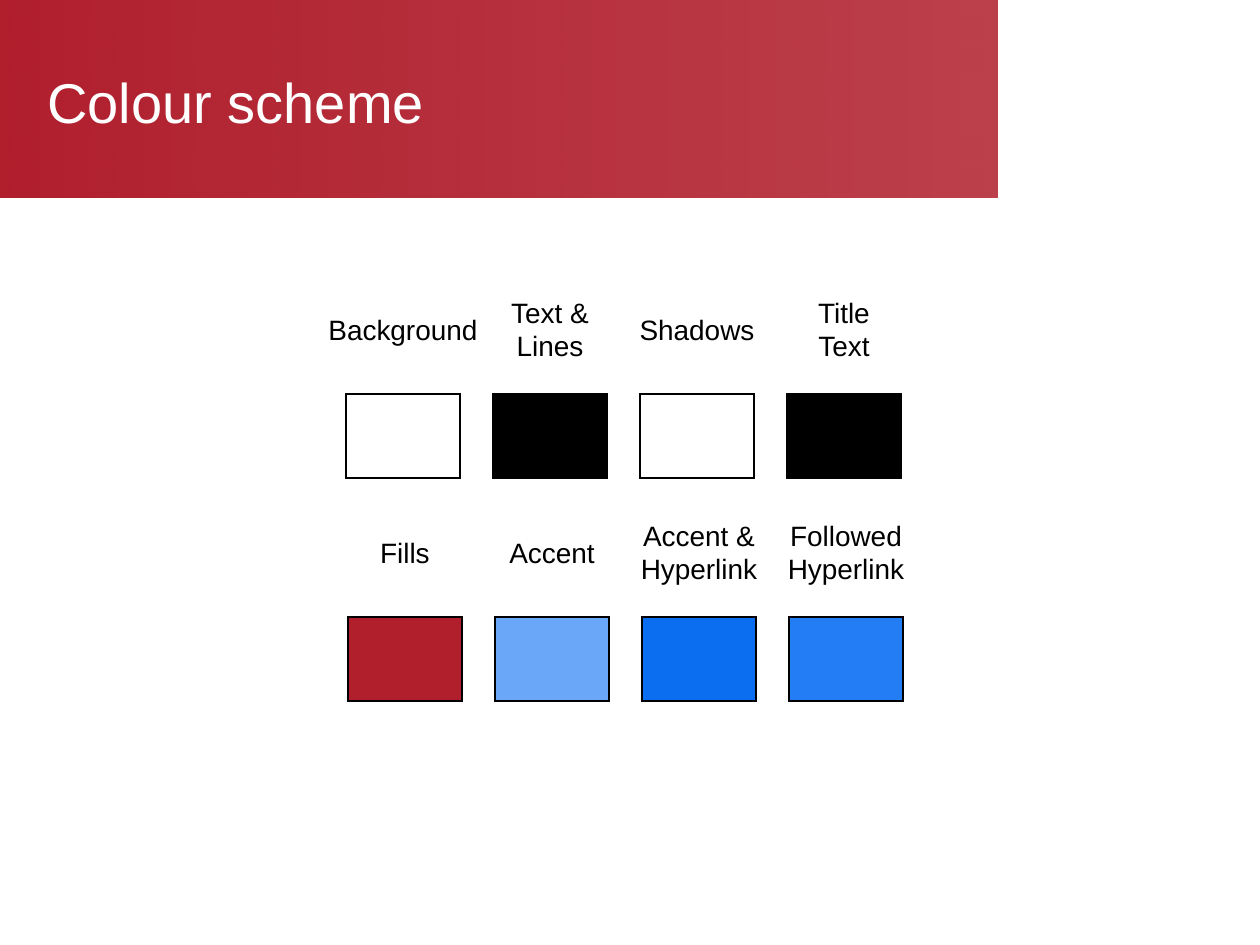
from dataclasses import dataclass

from lxml.etree import SubElement
from pptx import Presentation
from pptx.dml.color import RGBColor
from pptx.enum.shapes import MSO_SHAPE
from pptx.enum.text import MSO_ANCHOR, MSO_AUTO_SIZE, PP_ALIGN
from pptx.oxml.ns import qn
from pptx.shapes.autoshape import Shape
from pptx.slide import Slide
from pptx.util import Emu, Pt

PX_PER_INCH = 126
RED, WHITE, BLACK = "B11F2D", "FFFFFF", "000000"
SWATCH_WIDTH, SWATCH_HEIGHT, SWATCH_PITCH = 114, 84, 147
LABEL_RISE = 65  # from the top of a swatch up to the middle of its label


@dataclass(frozen=True)
class Swatch:
    label: str
    label_width: int
    color: str


@dataclass(frozen=True)
class SwatchRow:
    left: int
    top: int
    swatches: tuple[Swatch, ...]


ROWS = (
    SwatchRow(346, 394, (
        Swatch("Background", 178, WHITE),
        Swatch("Text &\nLines", 108, BLACK),
        Swatch("Shadows", 142, WHITE),
        Swatch("Title\vText", 82, BLACK),
    )),
    SwatchRow(348, 617, (
        Swatch("Fills", 78, RED),
        Swatch("Accent", 114, "6BA7F8"),
        Swatch("Accent &\nHyperlink", 146, "0B6DEF"),
        Swatch("Followed\nHyperlink", 146, "237DF5"),
    )),
)


def px(length: int) -> Emu:
    return Emu(round(length * 914400 / PX_PER_INCH))


def rgb(color: str) -> RGBColor:
    return RGBColor.from_string(color)


def add_text(slide: Slide, text: str, left: int, top: int, width: int, height: int, *,
             size: int, color: str, align: PP_ALIGN = PP_ALIGN.LEFT,
             anchor: MSO_ANCHOR = MSO_ANCHOR.TOP, wrap: bool = True,
             auto_size: MSO_AUTO_SIZE = MSO_AUTO_SIZE.NONE) -> None:
    """Add a text box; a newline starts a paragraph, a vertical tab breaks a line."""
    box = slide.shapes.add_textbox(px(left), px(top), px(width), px(height))
    frame = box.text_frame
    frame.text = text
    frame.word_wrap = wrap
    frame.auto_size = auto_size
    frame.vertical_anchor = anchor
    for paragraph in frame.paragraphs:
        paragraph.alignment = align
        for run in paragraph.runs:
            run.font.name = "Arial"
            run.font.size = Pt(size)
            run.font.color.rgb = rgb(color)


def add_rectangle(slide: Slide, left: int, top: int, width: int, height: int) -> Shape:
    shape = slide.shapes.add_shape(
        MSO_SHAPE.RECTANGLE, px(left), px(top), px(width), px(height))
    shape.shadow.inherit = False
    return shape


def add_banner(slide: Slide) -> None:
    """Add the red title band, which fades slightly towards the right."""
    banner = add_rectangle(slide, 0, 0, 998, 198)
    banner.line.fill.background()
    banner.fill.gradient()
    banner.fill.gradient_angle = 0
    for stop in banner.fill.gradient_stops:
        stop.color.rgb = rgb(RED)
    last_color = list(banner.fill._fill._gradFill.iter(qn("a:srgbClr")))[-1]
    SubElement(last_color, qn("a:alpha"), val="85000")


def add_swatch(slide: Slide, swatch: Swatch, left: int, top: int) -> None:
    shape = add_rectangle(slide, left, top, SWATCH_WIDTH, SWATCH_HEIGHT)
    shape.fill.solid()
    shape.fill.fore_color.rgb = rgb(swatch.color)
    shape.line.color.rgb = rgb(BLACK)
    shape.line.width = Pt(0.75)
    SubElement(shape.line._get_or_add_ln(), qn("a:miter"), lim="800000")

    label_height = 47 if len(swatch.label.splitlines()) == 1 else 81
    add_text(slide, swatch.label,
             left + (SWATCH_WIDTH - swatch.label_width) // 2,
             top - LABEL_RISE - label_height // 2,
             swatch.label_width, label_height,
             size=16, color=BLACK, align=PP_ALIGN.CENTER, wrap=False,
             auto_size=MSO_AUTO_SIZE.SHAPE_TO_FIT_TEXT)


def main() -> None:
    presentation = Presentation()
    presentation.slide_width = px(1260)
    presentation.slide_height = px(945)
    slide = presentation.slides.add_slide(presentation.slide_layouts[6])

    add_banner(slide)
    add_text(slide, "Colour scheme", 35, 38, 942, 127,
             size=32, color=WHITE, anchor=MSO_ANCHOR.MIDDLE)
    for row in ROWS:
        for column, swatch in enumerate(row.swatches):
            add_swatch(slide, swatch, row.left + column * SWATCH_PITCH, row.top)

    presentation.save("out.pptx")


if __name__ == "__main__":
    main()
